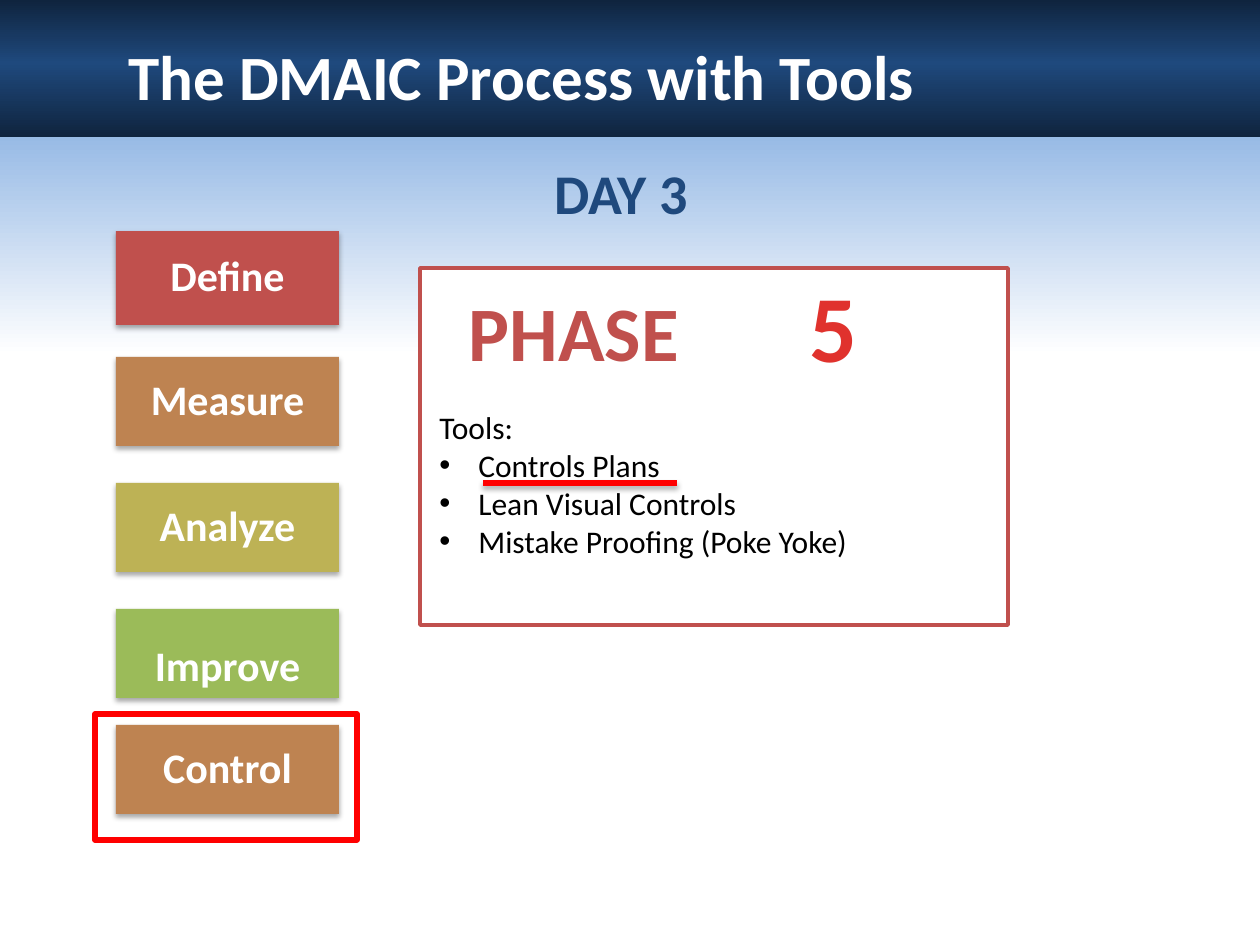
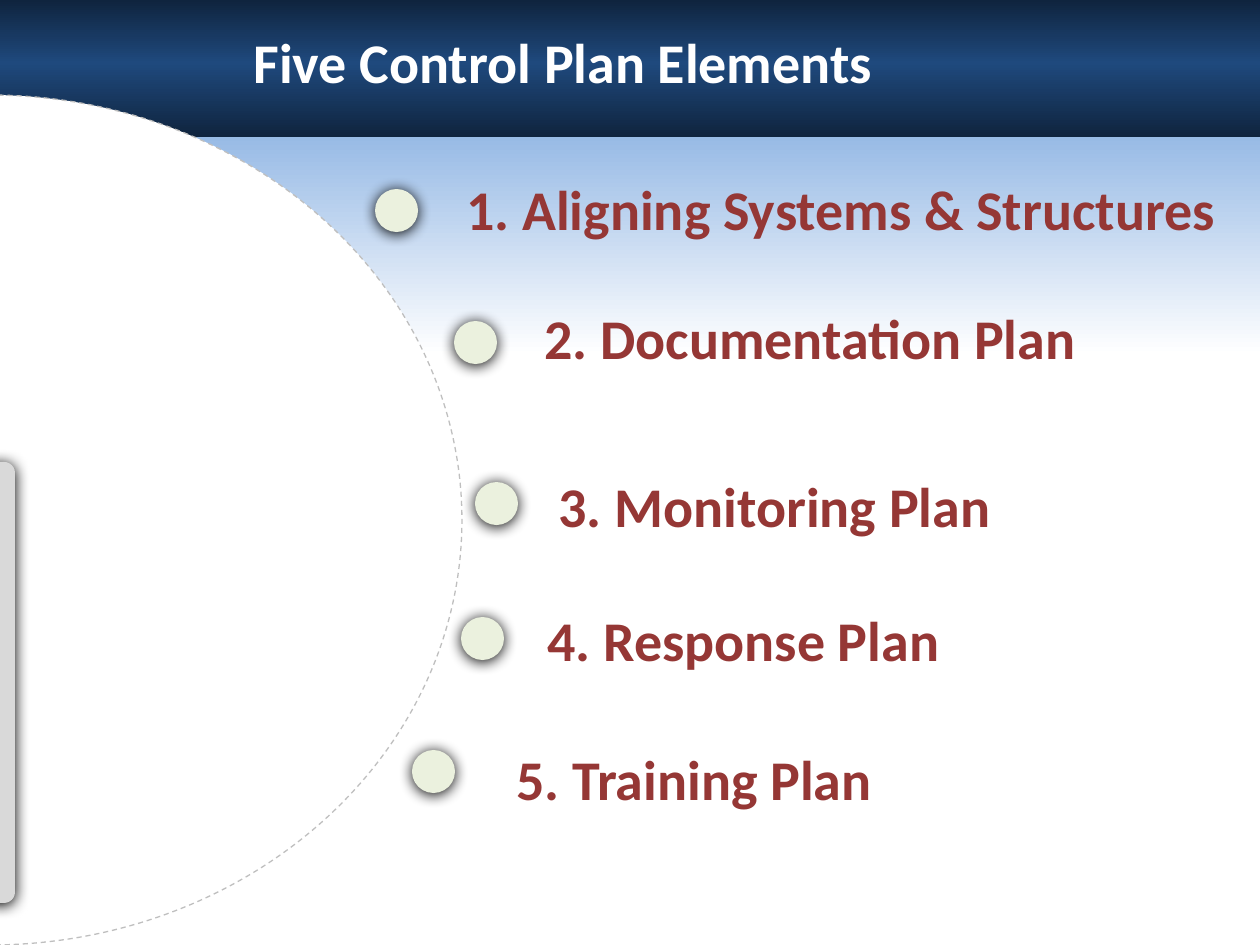
"""Build two slides on the DMAIC process and the elements of a control plan."""
from lxml import etree
from pptx import Presentation
from pptx.dml.color import RGBColor
from pptx.enum.dml import MSO_LINE
from pptx.enum.shapes import MSO_CONNECTOR, MSO_SHAPE
from pptx.enum.text import MSO_ANCHOR, PP_ALIGN
from pptx.oxml.ns import qn
from pptx.util import Emu, Pt

RECT, ELLIPSE = MSO_SHAPE.RECTANGLE, MSO_SHAPE.OVAL
ARC, ROUNDED = MSO_SHAPE.ARC, MSO_SHAPE.ROUNDED_RECTANGLE
LEFT, CENTER = PP_ALIGN.LEFT, PP_ALIGN.CENTER
TOP, MIDDLE = MSO_ANCHOR.TOP, MSO_ANCHOR.MIDDLE
DASH, STRAIGHT = MSO_LINE.DASH, MSO_CONNECTOR.STRAIGHT

FONT = "Calibri"
SLIDE_W, SLIDE_H = 1260, 945
COLORS = {
    "white": "FFFFFF", "black": "000000", "night": "0F243E", "navy": "1F497D",
    "sky": "8EB4E3", "red": "C0504D", "copper": "BE8351", "olive": "BDB255",
    "green": "9BBB59", "marker": "FF0000", "digit": "E0322D", "maroon": "953735",
    "dot": "EBF1DE", "panel": "D9D9D9", "outline": "BFBFBF",
}

HEADER = [(0, "night"), (46, "navy"), (100, "night")]
BODY = [(0, "sky"), (29, "white"), (100, "white")]
SOFT_SHADOW = (35, 3.1, 1.8)
DEEP_SHADOW = (100, 8.5, 1)

PHASES = [
    ("Define", "red", 231, 94, 0),
    ("Measure", "copper", 357, 89, 0),
    ("Analyze", "olive", 483, 89, 0),
    ("Improve", "green", 609, 89, 14),
    ("Control", "copper", 725, 89, 0),
]
TOOLS = ["Controls Plans", "Lean Visual Controls", "Mistake Proofing (Poke Yoke)"]
ELEMENTS = [
    ("1. Aligning Systems & Structures", (454, 168, 816), (375, 189), 1),
    ("2. Documentation Plan", (532, 297, 614), (454, 321), 1),
    ("3. Monitoring Plan", (546, 473, 571), (475, 482), 0.9),
    ("4. Response Plan", (535, 599, 620), (461, 617), 1),
    ("5. Training Plan", (504, 738, 557), (412, 750), 1),
]


def px(n):
    return Emu(round(n * 914400 / 126))


def rgb(name):
    return RGBColor.from_string(COLORS[name])


def sub(parent, tag, **attrs):
    return etree.SubElement(parent, qn(tag), {k: str(v) for k, v in attrs.items()})


def add_shadow(sp, shadow):
    opacity, blur, dist = shadow
    pr = sp._element.spPr
    for old in pr.findall(qn("a:effectLst")):
        pr.remove(old)
    outer = sub(sub(pr, "a:effectLst"), "a:outerShdw", blurRad=Pt(blur),
                dist=Pt(dist), dir=5400000, rotWithShape=0)
    color = sub(outer, "a:srgbClr", val=COLORS["black"])
    sub(color, "a:alpha", val=opacity * 1000)


def add_shape(s, kind, box, fill=None, line=None, width=1, shadow=None):
    sp = s.shapes.add_shape(kind, *map(px, box))
    sp.shadow.inherit = False
    if fill:
        sp.fill.solid()
        sp.fill.fore_color.rgb = rgb(fill)
    else:
        sp.fill.background()
    if line:
        sp.line.color.rgb = rgb(line)
        sp.line.width = Pt(width)
    else:
        sp.line.fill.background()
    if shadow:
        add_shadow(sp, shadow)
    return sp


def add_gradient(s, box, stops):
    sp = add_shape(s, RECT, box)
    sp.fill.gradient()
    sp.fill.gradient_angle = 270
    gs_list = sp._element.spPr.find(qn("a:gradFill")).find(qn("a:gsLst"))
    for old in list(gs_list):
        gs_list.remove(old)
    for pos, name in stops:
        sub(sub(gs_list, "a:gs", pos=pos * 1000), "a:srgbClr", val=COLORS[name])


def add_run(p, text, size, color, bold=True):
    r = p.add_run()
    r.text = text
    r.font.name, r.font.size, r.font.bold = FONT, Pt(size), bold
    r.font.color.rgb = rgb(color)


def add_text(s, box, text, size, color, bold=True, align=LEFT, spacing=1):
    tf = s.shapes.add_textbox(*map(px, box)).text_frame
    tf.word_wrap = True
    tf.vertical_anchor = TOP
    p = tf.paragraphs[0]
    p.alignment, p.line_spacing = align, spacing
    add_run(p, text, size, color, bold)
    return tf


def add_bullet(tf, text):
    p = tf.add_paragraph()
    pr = p._p.get_or_add_pPr()
    pr.set("marL", str(px(39)))
    pr.set("indent", str(-px(39)))
    sub(pr, "a:buFont", typeface="Arial")
    sub(pr, "a:buChar", char="•")
    add_run(p, text, 18, "black", False)


def add_slide(prs):
    s = prs.slides.add_slide(prs.slide_layouts[6])
    add_gradient(s, (0, 116, SLIDE_W, 824), BODY)
    add_gradient(s, (0, 0, SLIDE_W, 137), HEADER)
    return s


def add_title(s, box, text, size):
    add_text(s, box, text, size, "white")


def add_phase(s, name, color, top, height, drop):
    sp = add_shape(s, RECT, (116, top, 223, height), color, shadow=SOFT_SHADOW)
    tf = sp.text_frame
    tf.word_wrap, tf.vertical_anchor = True, MIDDLE
    tf.margin_left = tf.margin_right = px(29)
    tf.margin_top, tf.margin_bottom = px(16 + drop), px(16 - drop)
    p = tf.paragraphs[0]
    p.alignment, p.line_spacing = CENTER, 0.9
    add_run(p, name, 24, "white")


def build_process(prs):
    s = add_slide(prs)
    for phase in PHASES:
        add_phase(s, *phase)
    add_shape(s, RECT, (420, 268, 588, 357), "white", "red", 2)
    add_text(s, (794, 262, 79, 127), "5", 54, "digit", align=CENTER)
    add_text(s, (427, 278, 294, 106), "PHASE", 44, "red", align=CENTER)
    tf = add_text(s, (427, 402, 570, 280), "Tools:", 18, "black", False)
    for tool in TOOLS:
        add_bullet(tf, tool)
    add_title(s, (116, 31, 1071, 81), "The DMAIC Process with Tools", 36)
    add_text(s, (542, 152, 185, 81), "DAY 3", 32, "navy")
    add_shape(s, RECT, (95, 714, 262, 126), line="marker", width=3)
    underline = s.shapes.add_connector(STRAIGHT, *map(px, (483, 483, 677, 483)))
    underline.line.color.rgb = rgb("marker")
    underline.line.width = Pt(3)
    add_shadow(underline, SOFT_SHADOW)


def build_elements(prs):
    s = add_slide(prs)
    arc = add_shape(s, ARC, (-483, 95, 945, 850), "white", "outline", 0.75)
    arc.adjustments[0], arc.adjustments[1] = 162, 53.71
    arc.line.dash_style = DASH
    panel = add_shape(s, ROUNDED, (-16, 462, 31, 441), "panel", shadow=DEEP_SHADOW)
    panel.adjustments[0] = 0.35
    for text, (left, top, width), dot, spacing in ELEMENTS:
        add_text(s, (left, top, width, 81), text, 32, "maroon", spacing=spacing)
        add_shape(s, ELLIPSE, (*dot, 43, 43), "dot", shadow=DEEP_SHADOW)
    add_title(s, (241, 21, 673, 81), "Five Control Plan Elements", 32)


def main():
    prs = Presentation()
    prs.slide_width, prs.slide_height = px(SLIDE_W), px(SLIDE_H)
    build_process(prs)
    build_elements(prs)
    prs.save("out.pptx")


if __name__ == "__main__":
    main()
